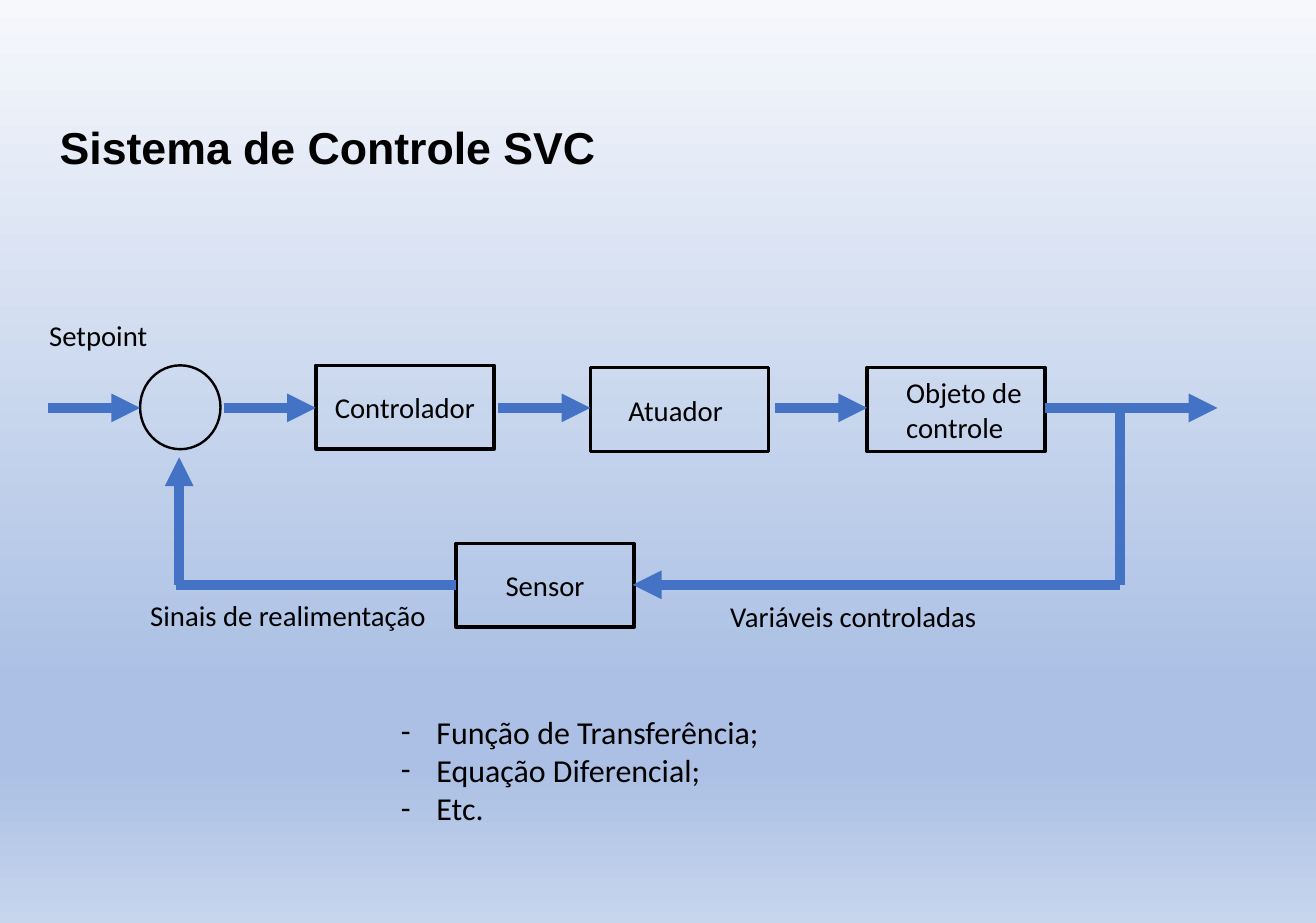
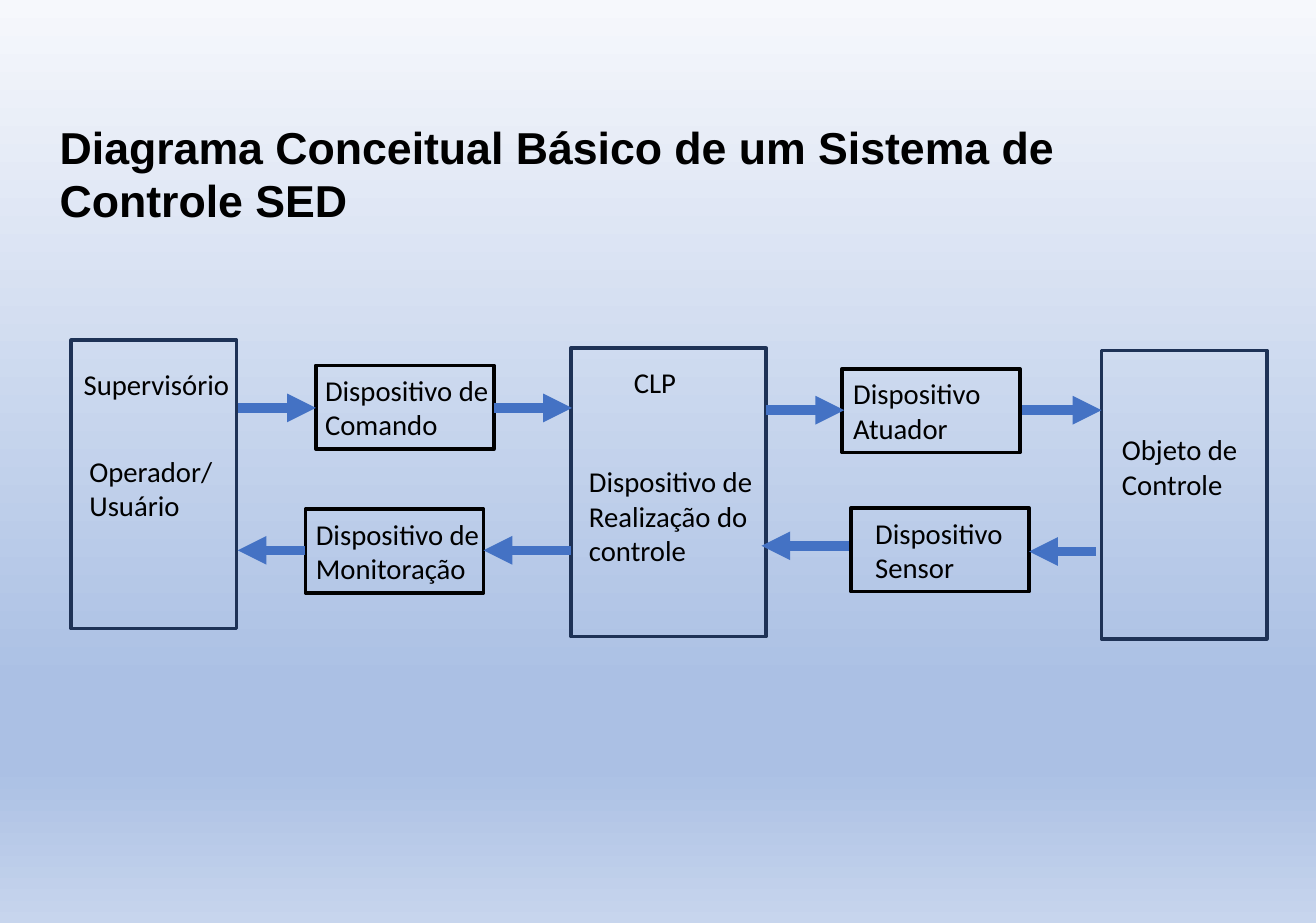
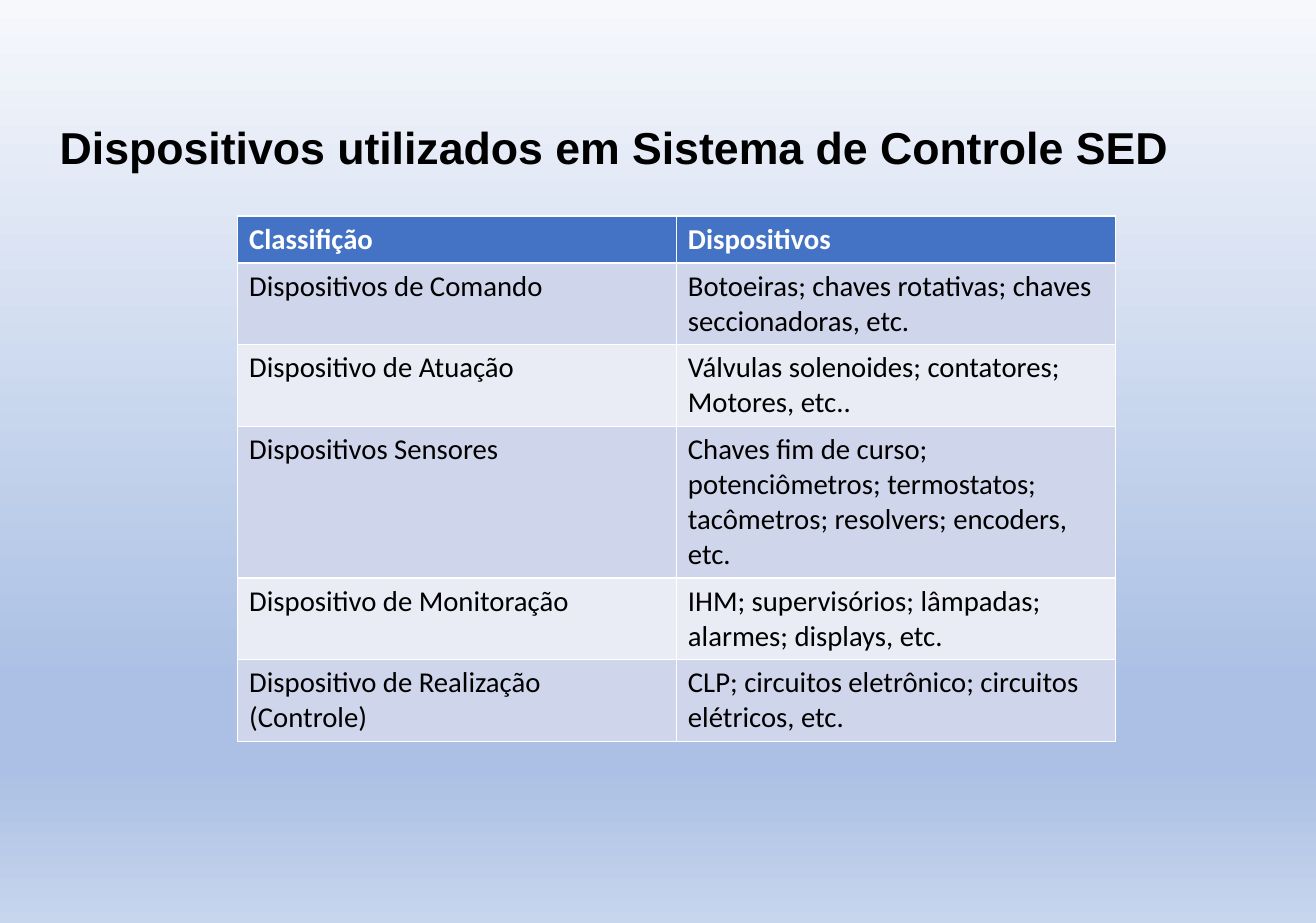
from dataclasses import dataclass

from lxml import etree
from pptx import Presentation
from pptx.dml.color import RGBColor
from pptx.enum.shapes import MSO_CONNECTOR, MSO_SHAPE
from pptx.enum.text import MSO_ANCHOR, MSO_AUTO_SIZE, PP_ALIGN
from pptx.oxml.ns import qn
from pptx.util import Inches, Pt

RECTANGLE = MSO_SHAPE.RECTANGLE
ELLIPSE = MSO_SHAPE.OVAL
STRAIGHT = MSO_CONNECTOR.STRAIGHT
TOP = MSO_ANCHOR.TOP
MIDDLE = MSO_ANCHOR.MIDDLE
LEFT = PP_ALIGN.LEFT
CENTER = PP_ALIGN.CENTER
FIXED_SIZE = MSO_AUTO_SIZE.NONE

CELL = Inches(0.1)
TITLE_AND_BODY = 1
TITLE_ONLY = 5


@dataclass(frozen=True)
class Theme:
    title_font: str = "Arial"
    body_font: str = "Calibri"
    title_size: float = 28
    list_size: float = 20
    body_size: float = 18
    ink: str = "000000"
    white: str = "FFFFFF"
    accent: str = "4472C4"
    panel_line: str = "1E3256"
    bands: tuple = ("CFD5EA", "E9EBF5")
    background: tuple = ((0, "F6F8FC"), (74, "ABC0E4"), (83, "ABC0E4"), (100, "C7D5ED"))
    circle_width: float = 1.5
    outline_width: float = 2.25
    arrow_width: float = 6


THEME = Theme()


@dataclass(frozen=True)
class Box:
    left: float
    top: float
    width: float
    height: float

    def inside(self, column, row, width, height):
        return Box(self.left + column, self.top + row, width, height)

    def point(self, column, row):
        return round((self.left + column) * CELL), round((self.top + row) * CELL)

    def frame(self):
        return (*self.point(0, 0), round(self.width * CELL), round(self.height * CELL))


SLIDE = Box(0, 0, 114.58, 80.33)
TITLE = SLIDE.inside(4.2, 9.9, 103.7, 10.4)
LOOP = SLIDE.inside(3, 27, 106, 28)
CONCEPT = SLIDE.inside(6, 29, 105, 28)
METHODS = SLIDE.inside(33.9, 61.5, 69.5, 11.1)
DEVICES = SLIDE.inside(20.7, 18.8, 76.4, 44.6)

BLOCK_SIZE = (15.5, 7.3)
PANEL_HEIGHT = 25.1


def color(value):
    return RGBColor.from_string(value)


def write_text(frame, text, size, font=THEME.body_font, ink=THEME.ink, bold=False, align=LEFT):
    frame.word_wrap = True
    for index, line in enumerate(text.split("\n")):
        paragraph = frame.paragraphs[0] if index == 0 else frame.add_paragraph()
        paragraph.alignment = align
        paragraph.space_before = Pt(0)
        run = paragraph.add_run()
        run.text = line
        run.font.name = font
        run.font.size = Pt(size)
        run.font.bold = bold
        run.font.color.rgb = color(ink)


def move(shape, box):
    shape.left, shape.top, shape.width, shape.height = box.frame()


def fill_placeholder(shape, box, text, size, **style):
    move(shape, box)
    frame = shape.text_frame
    frame.auto_size = FIXED_SIZE
    frame.vertical_anchor = TOP
    write_text(frame, text, size, **style)


def set_background(master):
    fill = master.background.fill
    fill.gradient()
    fill.gradient_angle = 270
    stops = next(master.element.iter(qn("a:gsLst")))
    for stop in list(stops):
        stops.remove(stop)
    for position, value in THEME.background:
        stop = etree.SubElement(stops, qn("a:gs"), pos=str(position * 1000))
        etree.SubElement(stop, qn("a:srgbClr"), val=value)


def add_titled_slide(presentation, layout, title):
    slide = presentation.slides.add_slide(presentation.slide_layouts[layout])
    fill_placeholder(slide.shapes.title, TITLE, title, THEME.title_size,
                     font=THEME.title_font, bold=True)
    return slide


def add_outline(slide, box, kind=RECTANGLE, line=THEME.ink, width=THEME.outline_width):
    shape = slide.shapes.add_shape(kind, *box.frame())
    shape.shadow.inherit = False
    shape.fill.background()
    shape.line.color.rgb = color(line)
    shape.line.width = Pt(width)
    return shape


def add_block(slide, region, column, row, text, inset=None):
    shape = add_outline(slide, region.inside(column, row, *BLOCK_SIZE))
    frame = shape.text_frame
    frame.margin_left = round((inset or 0) * CELL)
    frame.margin_right = frame.margin_top = frame.margin_bottom = 0
    frame.vertical_anchor = MIDDLE
    write_text(frame, text, THEME.body_size, align=CENTER if inset is None else LEFT)


def add_label(slide, region, column, row, text, width=17):
    height = 1 + 3 * len(text.split("\n"))
    label = slide.shapes.add_textbox(*region.inside(column, row, width, height).frame())
    write_text(label.text_frame, text, THEME.body_size)


def add_flow(slide, region, start, end, arrow=True):
    connector = slide.shapes.add_connector(STRAIGHT, *region.point(*start), *region.point(*end))
    connector.line.color.rgb = color(THEME.accent)
    connector.line.width = Pt(THEME.arrow_width)
    properties = connector.element.spPr
    if arrow:
        etree.SubElement(properties.find(qn("a:ln")), qn("a:tailEnd"), type="triangle")
    etree.SubElement(properties, qn("a:effectLst"))


def draw_control_loop(slide, region):
    add_outline(slide, region.inside(9.2, 4.8, 7, 7.3), ELLIPSE, width=THEME.circle_width)
    for column, row, text, inset in (
        (24.5, 4.8, "Controlador", None),
        (48.4, 5, "Atuador", 3.3),
        (72.5, 5, "Objeto de\ncontrole", 3.4),
        (36.7, 20.3, "Sensor", None),
    ):
        add_block(slide, region, column, row, text, inset)

    forward, feedback, branch, sum_point = 8.5, 23.9, 94.5, 12.6
    for column in (1.2, 16.5, 40.4, 64.5):
        add_flow(slide, region, (column, forward), (column + 8, forward))
    add_flow(slide, region, (88, forward), (103, forward))
    add_flow(slide, region, (branch, feedback), (branch, forward), arrow=False)
    add_flow(slide, region, (branch, feedback), (52.1, feedback))
    add_flow(slide, region, (36.7, feedback), (12.3, feedback), arrow=False)
    add_flow(slide, region, (sum_point, feedback), (sum_point, 12.8))

    add_label(slide, region, 0.3, 0.2, "Setpoint")
    add_label(slide, region, 9.1, 24.5, "Sinais de realimentação", width=28)
    add_label(slide, region, 59.6, 24.6, "Variáveis controladas", width=28)


def fill_list(shape, box, items):
    fill_placeholder(shape, box, "\n".join(items), THEME.list_size)
    indent = Inches(0.31)
    for paragraph in shape.text_frame.paragraphs:
        properties = paragraph._p.get_or_add_pPr()
        properties.set("marL", str(indent))
        properties.set("indent", str(-indent))
        etree.SubElement(properties, qn("a:buFont"), typeface=THEME.body_font)
        etree.SubElement(properties, qn("a:buChar"), char="-")


def draw_concept_diagram(slide, region):
    for column, row, width in ((0.2, 0.6, 14.4), (43.7, 1.3, 17), (89.9, 1.5, 14.4)):
        add_outline(slide, region.inside(column, row, width, PANEL_HEIGHT),
                    line=THEME.panel_line)
    for column, row, text, inset in (
        (21.5, 2.8, "Dispositivo de\nComando", 0.8),
        (67.3, 3.1, "Dispositivo\nAtuador", 1),
        (20.6, 15.3, "Dispositivo de\nMonitoração", 0.9),
        (68.1, 15.2, "Dispositivo\nSensor", 2.1),
    ):
        add_block(slide, region, column, row, text, inset)
    for start, end, row in (
        (14.7, 21.5, 6.5), (37, 43.8, 6.5), (60.7, 67.5, 6.7), (83, 89.9, 6.7),
        (20.6, 14.7, 18.9), (43.7, 36.1, 18.9), (67.9, 60.3, 18.5), (89.4, 83.6, 19),
    ):
        add_flow(slide, region, (start, row), (end, row))
    for column, row, text in (
        (0.3, 2.4, "Supervisório"),
        (0.8, 10, "Operador/\nUsuário"),
        (48.2, 2.3, "CLP"),
        (44.3, 10.9, "Dispositivo de\nRealização do\ncontrole"),
        (90.7, 8.1, "Objeto de\nControle"),
    ):
        add_label(slide, region, column, row, text)


def draw_device_table(slide, region, rows, heights):
    table = slide.shapes.add_table(len(rows), len(rows[0]), *region.frame()).table
    for index, (texts, height) in enumerate(zip(rows, heights)):
        header = index == 0
        table.rows[index].height = round(height * CELL)
        for column, text in enumerate(texts):
            cell = table.cell(index, column)
            cell.fill.solid()
            band = THEME.accent if header else THEME.bands[(index - 1) % 2]
            cell.fill.fore_color.rgb = color(band)
            write_text(cell.text_frame, text, THEME.body_size,
                       ink=THEME.white if header else THEME.ink, bold=header)


def main():
    presentation = Presentation()
    presentation.slide_width = round(SLIDE.width * CELL)
    presentation.slide_height = round(SLIDE.height * CELL)
    set_background(presentation.slide_master)

    slide = add_titled_slide(presentation, TITLE_AND_BODY, "Sistema de Controle SVC")
    draw_control_loop(slide, LOOP)
    fill_list(slide.placeholders[1], METHODS,
              ("Função de Transferência;", "Equação Diferencial;", "Etc."))

    slide = add_titled_slide(presentation, TITLE_ONLY,
                             "Diagrama Conceitual Básico de um Sistema de Controle SED")
    draw_concept_diagram(slide, CONCEPT)

    slide = add_titled_slide(presentation, TITLE_ONLY,
                             "Dispositivos utilizados em Sistema de Controle SED")
    draw_device_table(slide, DEVICES, (
        ("Classifição", "Dispositivos"),
        ("Dispositivos de Comando", "Botoeiras; chaves rotativas; chaves seccionadoras, etc."),
        ("Dispositivo de Atuação", "Válvulas solenoides; contatores;\nMotores, etc.."),
        ("Dispositivos Sensores",
         "Chaves fim de curso; potenciômetros; termostatos; "
         "tacômetros; resolvers; encoders, etc."),
        ("Dispositivo de Monitoração", "IHM; supervisórios; lâmpadas; alarmes; displays, etc."),
        ("Dispositivo de Realização (Controle)",
         "CLP; circuitos eletrônico; circuitos elétricos, etc."),
    ), (4.1, 6.9, 6.9, 12.9, 6.9, 6.9))

    presentation.save("out.pptx")


if __name__ == "__main__":
    main()
